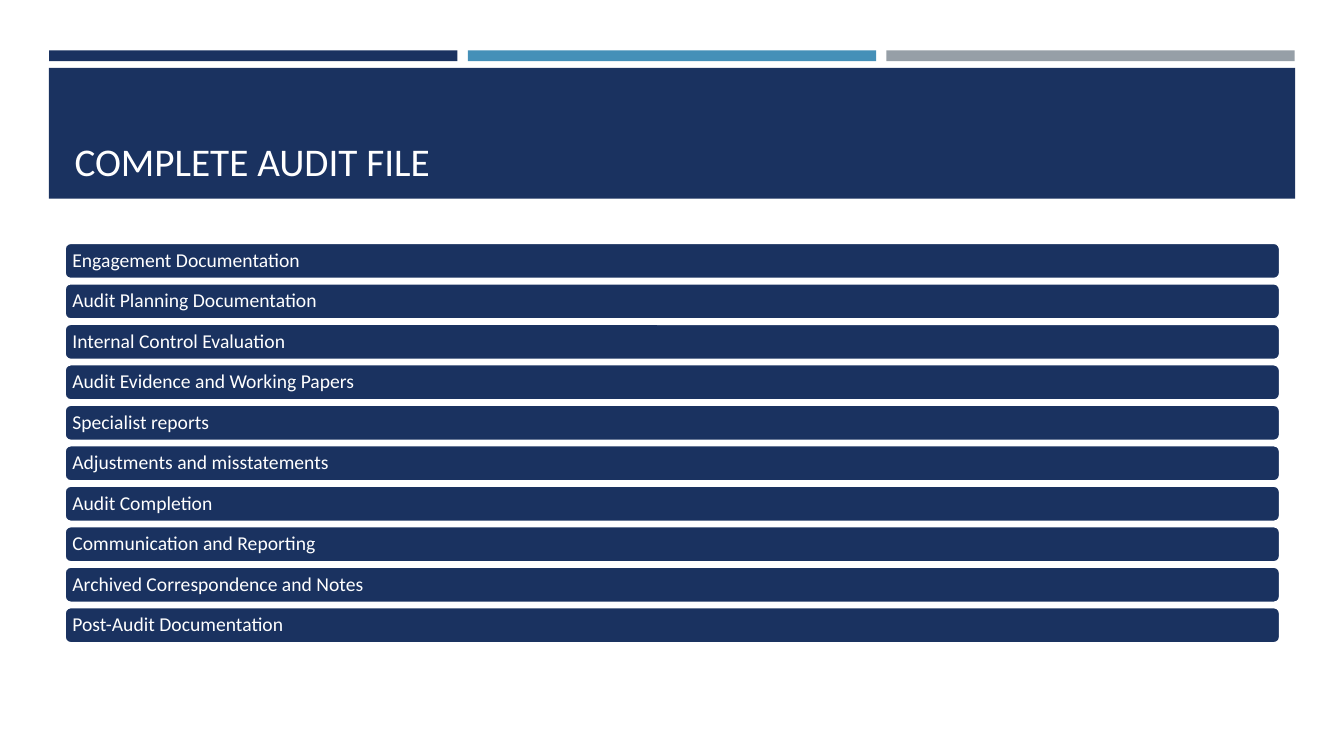
from pptx import Presentation
from pptx.dml.color import RGBColor
from pptx.enum.shapes import MSO_SHAPE as Shape
from pptx.enum.text import MSO_ANCHOR as Anchor, PP_ALIGN as Align
from pptx.util import Cm, Pt

NAVY, BLUE, GREY, WHITE = "1A3260", "4590B8", "969FA7", "FFFFFF"
SECTIONS = [
    "Engagement Documentation",
    "Audit Planning Documentation",
    "Internal Control Evaluation",
    "Audit Evidence and Working Papers",
    "Specialist reports",
    "Adjustments and misstatements",
    "Audit Completion",
    "Communication and Reporting",
    "Archived Correspondence and Notes",
    "Post-Audit Documentation",
]


def color(value):
    return RGBColor.from_string(value)


class SlideBuilder:
    """Draws styled elements on one slide, with lengths in centimetres."""

    font = "Calibri"
    text_color = WHITE

    def __init__(self, page):
        self.page = page

    def bar(self, left, top, width, height, fill, kind=Shape.RECTANGLE):
        box = self.page.shapes.add_shape(kind, Cm(left), Cm(top), Cm(width), Cm(height))
        box.shadow.inherit = False
        box.fill.solid()
        box.fill.fore_color.rgb = color(fill)
        box.line.fill.background()
        return box

    def label(self, box, text, size, anchor, spacing=1.0):
        frame = box.text_frame
        frame.word_wrap = True
        frame.vertical_anchor = anchor
        para = frame.paragraphs[0]
        para.alignment = Align.LEFT
        para.line_spacing = spacing
        span = para.add_run()
        span.text = text
        span.font.name = self.font
        span.font.size = Pt(size)
        span.font.color.rgb = color(self.text_color)

    def title(self, text, left, top, width, height):
        box = self.page.shapes.add_textbox(Cm(left), Cm(top), Cm(width), Cm(height))
        self.label(box, text, 28, Anchor.BOTTOM)

    def section(self, text, left, top, width, height):
        box = self.bar(left, top, width, height, NAVY, Shape.ROUNDED_RECTANGLE)
        box.line.color.rgb = color(WHITE)
        box.line.width = Pt(1.75)
        frame = box.text_frame
        frame.margin_left = frame.margin_right = Cm(0.15)
        frame.margin_top = frame.margin_bottom = Cm(0.15)
        self.label(box, text, 14, Anchor.MIDDLE, 0.9)


def main():
    deck = Presentation()
    deck.slide_width, deck.slide_height = Cm(33.87), Cm(19.05)
    builder = SlideBuilder(deck.slides.add_slide(deck.slide_layouts[6]))
    for index, fill in enumerate([NAVY, BLUE, GREY]):
        builder.bar(1.24 + index * 10.55, 1.27, 10.29, 0.27, fill)
    builder.bar(1.23, 1.71, 31.41, 3.3, NAVY)
    builder.title("COMPLETE AUDIT FILE", 1.63, 1.96, 30.63, 2.82)
    for index, name in enumerate(SECTIONS):
        builder.section(name, 1.63, 6.12 + index * 1.02, 30.63, 0.91)
    deck.save("out.pptx")


if __name__ == "__main__":
    main()
